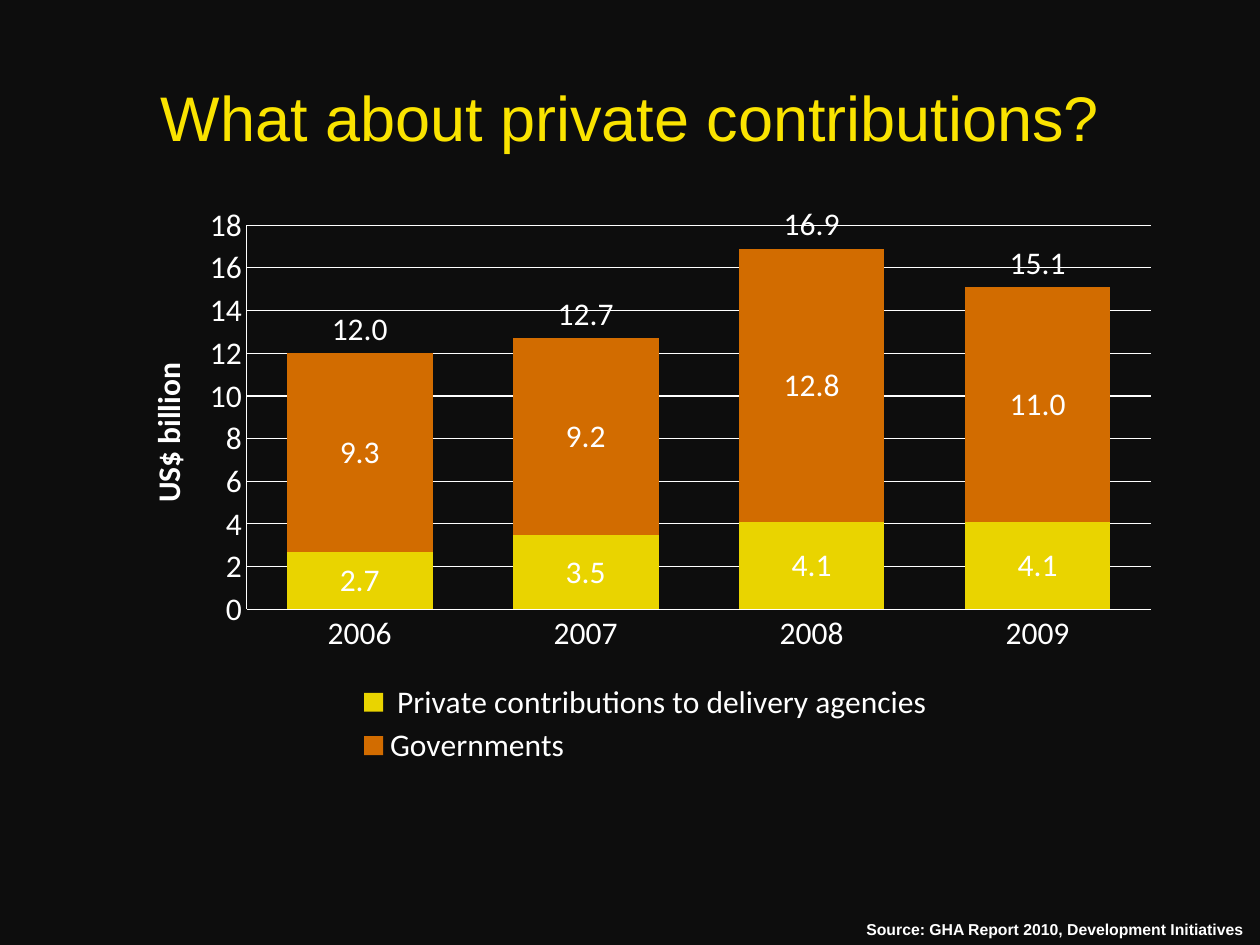
from dataclasses import dataclass
from typing import Optional

import pptx
import pptx.chart.data
import pptx.dml.color
import pptx.enum.chart
import pptx.enum.text
import pptx.oxml
import pptx.oxml.ns
import pptx.util
from pptx.util import Pt

qn = pptx.oxml.ns.qn
RGB = pptx.dml.color.RGBColor.from_string
XL = pptx.enum.chart


@dataclass(frozen=True)
class Theme:
    background: str = "0D0D0D"
    title: str = "FAE300"
    text: str = "FFFFFF"
    private: str = "E9D400"
    governments: str = "D26C00"
    title_font: str = "Arial"
    chart_font: str = "Calibri"
    title_size: float = 36
    chart_size: float = 18
    source_size: float = 9


@dataclass(frozen=True)
class Series:
    name: str
    values: tuple[float, ...]
    color: Optional[str] = None


THEME = Theme()
YEARS = ("2006", "2007", "2008", "2009")
SERIES = (
    Series(" Private contributions to delivery agencies", (2.7, 3.5, 4.1, 4.1), THEME.private),
    Series("Governments", (9.3, 9.2, 12.8, 11.0), THEME.governments),
    Series("Total", (12.0, 12.7, 16.9, 15.1)),
)


def set_font(font, name: str, size: float, color: str, bold: bool = False) -> None:
    font.name, font.size, font.bold = name, Pt(size), bold
    font.color.rgb = RGB(color)


def add_run(p, text: str, *style) -> None:
    r = p.add_run()
    r.text = text
    set_font(r.font, *style)


def chart_xml(tag: str, inner: str = "", attributes: str = ""):
    return pptx.oxml.parse_xml(
        f'<c:{tag} {pptx.oxml.ns.nsdecls("c")} {attributes}>{inner}</c:{tag}>')


def set_layout(parent, before, **position: float) -> None:
    """Place a chart part by fractions of the chart area, ahead of a sibling element."""
    for old in parent.findall(qn("c:layout")):
        parent.remove(old)
    target = '<c:layoutTarget val="inner"/>' if parent.tag == qn("c:plotArea") else ""
    modes = '<c:xMode val="edge"/><c:yMode val="edge"/>'
    values = "".join(f'<c:{key} val="{value}"/>' for key, value in position.items())
    before.addprevious(
        chart_xml("layout", f"<c:manualLayout>{target}{modes}{values}</c:manualLayout>"))


def move_total_to_line(chart) -> None:
    """Turn the last bar series into an unseen line that carries the total labels."""
    bars = chart._chartSpace.find(".//" + qn("c:barChart"))
    total = bars.findall(qn("c:ser"))[-1]
    for bar_only in total.findall(qn("c:invertIfNegative")):
        total.remove(bar_only)
    line = chart_xml("lineChart", '<c:grouping val="standard"/><c:varyColors val="0"/>')
    bars.addnext(line)
    line.append(total)
    line.append(chart_xml("marker", attributes='val="1"'))
    for axis in bars.findall(qn("c:axId")):
        line.append(chart_xml("axId", attributes=f'val="{axis.get("val")}"'))
    series = chart.plots[1].series[0]
    series.format.line.fill.background()
    series.marker.style = XL.XL_MARKER_STYLE.NONE
    series.smooth = False


def label_series(series, position) -> None:
    labels = series.data_labels
    labels.show_value = True
    labels.number_format, labels.number_format_is_linked = "0.0", False
    labels.position = position
    set_font(labels.font, THEME.chart_font, THEME.chart_size, THEME.text)


def style_axes(chart) -> None:
    value_axis = chart.value_axis
    value_axis.minimum_scale, value_axis.maximum_scale, value_axis.major_unit = 0, 18, 2
    value_axis.has_major_gridlines = True
    value_axis.tick_labels.number_format = "0"
    value_axis.tick_labels.number_format_is_linked = False
    for axis in (chart.category_axis, value_axis):
        axis.major_tick_mark = axis.minor_tick_mark = XL.XL_TICK_MARK.NONE
    for part in (chart.category_axis, value_axis, value_axis.major_gridlines):
        part.format.line.color.rgb = RGB(THEME.text)
        part.format.line.width = Pt(0.75)

    title = value_axis.axis_title
    tf = title.text_frame
    add_run(tf.paragraphs[0], "US$ billion", THEME.chart_font, THEME.chart_size, THEME.text, True)
    tf._txBody.find(qn("a:bodyPr")).set("rot", "-5400000")
    overlay = title._element.find(qn("c:overlay"))
    set_layout(title._element, overlay, x=0.03, y=0.28)


def style_legend(chart) -> None:
    chart.has_legend = True
    legend = chart.legend
    legend.position = XL.XL_LEGEND_POSITION.BOTTOM
    legend.include_in_layout = False
    set_font(legend.font, THEME.chart_font, THEME.chart_size, THEME.text)
    element = legend._element
    set_layout(element, element.find(qn("c:overlay")), x=0.23, y=0.84, w=0.55, h=0.16)
    element.find(qn("c:layout")).addprevious(
        chart_xml("legendEntry", '<c:idx val="2"/><c:delete val="1"/>'))


def add_contributions_chart(s) -> None:
    data = pptx.chart.data.CategoryChartData(number_format="0.0")
    data.categories = YEARS
    for series in SERIES:
        data.add_series(series.name, series.values)
    chart = s.shapes.add_chart(XL.XL_CHART_TYPE.COLUMN_STACKED, Pt(62), Pt(112.3),
                               Pt(607.7), Pt(327.6), data).chart
    chart.has_title = False
    set_font(chart.font, THEME.chart_font, THEME.chart_size, THEME.text)
    move_total_to_line(chart)

    bars, line = chart.plots
    bars.gap_width, bars.overlap, bars.vary_by_categories = 55, 100, False
    for bar, series in zip(bars.series, SERIES):
        bar.format.fill.solid()
        bar.format.fill.fore_color.rgb = RGB(series.color)
        label_series(bar, XL.XL_LABEL_POSITION.CENTER)
    label_series(line.series[0], XL.XL_LABEL_POSITION.ABOVE)

    style_axes(chart)
    style_legend(chart)
    plot_area = chart._chartSpace.find(".//" + qn("c:plotArea"))
    set_layout(plot_area, plot_area.find(qn("c:barChart")), x=0.13, y=0.05, w=0.85, h=0.67)


def add_title(s) -> None:
    sp = s.shapes.title
    sp.left, sp.top, sp.width, sp.height = Pt(36), Pt(21.6), Pt(648), Pt(90)
    tf = sp.text_frame
    tf.vertical_anchor = pptx.enum.text.MSO_ANCHOR.MIDDLE
    p = tf.paragraphs[0]
    p.alignment = pptx.enum.text.PP_ALIGN.CENTER
    add_run(p, "What about private contributions?",
            THEME.title_font, THEME.title_size, THEME.title)


def add_source(s) -> None:
    tf = s.shapes.add_textbox(Pt(488), Pt(522), Pt(232), Pt(18)).text_frame
    tf.word_wrap = False
    tf.auto_size = pptx.enum.text.MSO_AUTO_SIZE.SHAPE_TO_FIT_TEXT
    add_run(tf.paragraphs[0], "Source: GHA Report 2010, Development Initiatives",
            THEME.title_font, THEME.source_size, THEME.text, True)


def main() -> None:
    prs = pptx.Presentation()
    prs.slide_width, prs.slide_height = Pt(720), Pt(540)
    s = prs.slides.add_slide(prs.slide_layouts.get_by_name("Title Only"))
    s.background.fill.solid()
    s.background.fill.fore_color.rgb = RGB(THEME.background)
    add_title(s)
    add_contributions_chart(s)
    add_source(s)
    prs.save("out.pptx")


if __name__ == "__main__":
    main()
